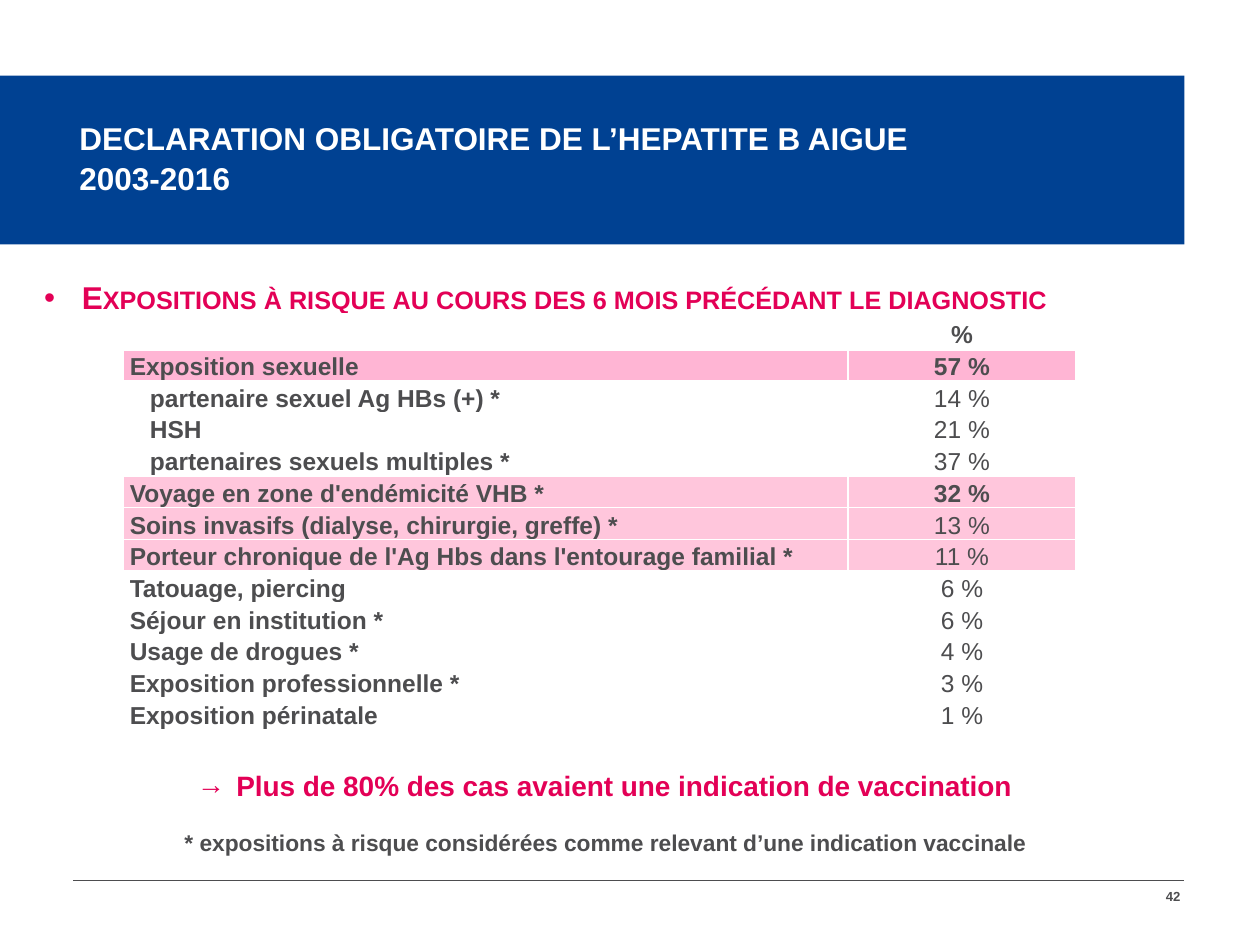
import pptx
import pptx.dml.color
import pptx.enum.shapes
import pptx.enum.text
import pptx.oxml
import pptx.oxml.ns
import pptx.util
from lxml import etree

Inches, Pt = pptx.util.Inches, pptx.util.Pt
RGBColor = pptx.dml.color.RGBColor
ALIGN = pptx.enum.text.PP_ALIGN
ANCHOR = pptx.enum.text.MSO_ANCHOR
qn = pptx.oxml.ns.qn

BLUE = RGBColor(0x00, 0x41, 0x92)
GREY = RGBColor(0x4D, 0x4D, 0x4F)
PINK = RGBColor(0xE3, 0x00, 0x56)
WHITE = RGBColor(0xFF, 0xFF, 0xFF)
ROSE = RGBColor(0xFF, 0xB5, 0xD4)
PALE_ROSE = RGBColor(0xFF, 0xC6, 0xDC)

# label, share, row fill, share in bold, sub-item
EXPOSURES = [
    ("Exposition sexuelle", "57 %", ROSE, True, False),
    ("partenaire sexuel Ag HBs (+) *", "14 %", None, False, True),
    ("HSH", "21 %", None, False, True),
    ("partenaires sexuels multiples *", "37 %", None, False, True),
    ("Voyage en zone d'endémicité VHB *", "32 %", PALE_ROSE, True, False),
    ("Soins invasifs (dialyse, chirurgie, greffe) *", "13 %", PALE_ROSE, False, False),
    ("Porteur chronique de l'Ag Hbs dans l'entourage familial *", "11 %",
     PALE_ROSE, False, False),
    ("Tatouage, piercing", "6 %", None, False, False),
    ("Séjour en institution *", "6 %", None, False, False),
    ("Usage de drogues *", "4 %", None, False, False),
    ("Exposition professionnelle *", "3 %", None, False, False),
    ("Exposition périnatale", "1 %", None, False, False),
]


def apply(target, formats):
    for name, value in formats.items():
        setattr(target, name, value)


def place(shape, left, top, width, height):
    apply(shape, {"left": Inches(left), "top": Inches(top),
                  "width": Inches(width), "height": Inches(height)})


def set_frame(frame, anchor=ANCHOR.TOP, wrap=True):
    apply(frame, {"margin_left": Inches(0.04), "margin_right": Inches(0.04),
                  "margin_top": 0, "margin_bottom": 0, "word_wrap": wrap,
                  "vertical_anchor": anchor,
                  "auto_size": pptx.enum.text.MSO_AUTO_SIZE.NONE})


def write(paragraph, text, size, color, bold=True, align=ALIGN.LEFT,
          spacing=1.0, before=0):
    apply(paragraph, {"alignment": align, "line_spacing": spacing,
                      "space_before": Pt(before), "space_after": Pt(0)})
    run = paragraph.add_run()
    run.text = text
    apply(run.font, {"name": "Arial", "size": Pt(size), "bold": bold})
    run.font.color.rgb = color
    return run


def add_bullet(paragraph, char, indent):
    properties = paragraph._p.get_or_add_pPr()
    properties.set("marL", str(Inches(indent)))
    properties.set("indent", str(-Inches(indent)))
    color = etree.SubElement(properties, qn("a:buClr"))
    etree.SubElement(color, qn("a:srgbClr")).set("val", str(PINK))
    etree.SubElement(properties, qn("a:buFont")).set("typeface", "Arial")
    etree.SubElement(properties, qn("a:buChar")).set("char", char)


def set_borders(cell, bottom=1):
    properties = cell._tc.get_or_add_tcPr()
    for position, (side, width) in enumerate(
            {"lnL": 1, "lnR": 1, "lnT": 1, "lnB": bottom}.items()):
        line = pptx.oxml.parse_xml(
            f'<a:{side} {pptx.oxml.ns.nsdecls("a")} w="{Pt(width)}">'
            f'<a:solidFill><a:srgbClr val="{WHITE}"/></a:solidFill></a:{side}>')
        properties.insert(position, line)


def fill_cell(cell, text, fill=None, bold=True, align=ALIGN.LEFT, indent=0.05,
              bottom=1):
    apply(cell, {"margin_left": Inches(indent), "margin_right": Inches(0.05),
                 "margin_top": 0, "margin_bottom": 0,
                 "vertical_anchor": ANCHOR.BOTTOM})
    if fill is None:
        cell.fill.background()
    else:
        cell.fill.solid()
        cell.fill.fore_color.rgb = fill
    set_borders(cell, bottom)
    write(cell.text_frame.paragraphs[0], text, 14, GREY, bold, align, 1.15)


def add_band(slide):
    band = slide.shapes.add_shape(pptx.enum.shapes.MSO_SHAPE.RECTANGLE,
                                  0, Inches(0.6), Inches(9.4), Inches(1.34))
    band.shadow.inherit = False
    band.fill.solid()
    band.fill.fore_color.rgb = BLUE
    band.line.fill.background()
    # Behind the title placeholder
    slide.shapes._spTree.insert(2, band._element)


def add_footer(slide):
    rule = slide.shapes.add_connector(pptx.enum.shapes.MSO_CONNECTOR.STRAIGHT,
                                      Inches(0.58), Inches(6.99),
                                      Inches(9.4), Inches(6.99))
    rule.line.color.rgb = GREY
    rule.line.width = Pt(0.75)
    etree.SubElement(rule._element.spPr, qn("a:effectLst"))
    number = slide.shapes.add_textbox(Inches(9.14), Inches(7.05),
                                      Inches(0.27), Inches(0.13))
    set_frame(number.text_frame, wrap=False)
    write(number.text_frame.paragraphs[0], "42", 7.5, GREY, align=ALIGN.RIGHT)


def add_exposure_table(slide):
    row_count = len(EXPOSURES) + 2
    table = slide.shapes.add_table(row_count, 2, Inches(0.98), Inches(2.49),
                                   Inches(7.56), Inches(0.25 * row_count)).table
    for column, width in zip(table.columns, (5.75, 1.81)):
        column.width = Inches(width)
    for row in table.rows:
        row.height = Inches(0.25)

    fill_cell(table.cell(0, 0), "", bottom=3)
    fill_cell(table.cell(0, 1), "%", align=ALIGN.CENTER, bottom=3)
    for row, (label, share, fill, bold, sub_item) in enumerate(EXPOSURES, 1):
        fill_cell(table.cell(row, 0), label, fill, indent=0.21 if sub_item else 0.05)
        fill_cell(table.cell(row, 1), share, fill, bold, ALIGN.CENTER)
    for column in range(2):
        fill_cell(table.cell(row_count - 1, column), "")


def add_conclusion(slide):
    box = slide.shapes.add_textbox(Inches(0.51), Inches(6.1),
                                   Inches(8.58), Inches(0.93))
    set_frame(box.text_frame)
    message = box.text_frame.paragraphs[0]
    add_bullet(message, "→", 0.31)
    write(message, "Plus de 80% des cas avaient une indication de vaccination",
          16, PINK, align=ALIGN.CENTER)
    write(box.text_frame.add_paragraph(),
          "* expositions à risque considérées comme relevant d’une indication vaccinale",
          13, GREY, align=ALIGN.CENTER, before=15)


def main():
    deck = pptx.Presentation()
    apply(deck, {"slide_width": Inches(10), "slide_height": Inches(7.5)})
    slide = deck.slides.add_slide(deck.slide_layouts[1])

    # Title on its band
    add_band(slide)
    title = slide.shapes.title
    place(title, 0.59, 0.62, 7.17, 1.25)
    set_frame(title.text_frame, ANCHOR.MIDDLE)
    write(title.text_frame.paragraphs[0],
          "DECLARATION OBLIGATOIRE DE L’HEPATITE B AIGUE 2003-2016",
          18, WHITE, spacing=1.05)

    # Heading of the table
    body = slide.placeholders[1]
    place(body, 0.31, 2.18, 9.17, 4.25)
    set_frame(body.text_frame)
    heading = body.text_frame.paragraphs[0]
    heading.level = 2
    add_bullet(heading, "•", 0.3)
    heading_run = write(
        heading, "Expositions à risque au cours des 6 mois précédant le diagnostic",
        18, PINK, spacing=1.1)
    heading_run.font._element.set("cap", "small")

    # Table, conclusion and footer
    add_exposure_table(slide)
    add_conclusion(slide)
    add_footer(slide)
    deck.save("out.pptx")


if __name__ == "__main__":
    main()
